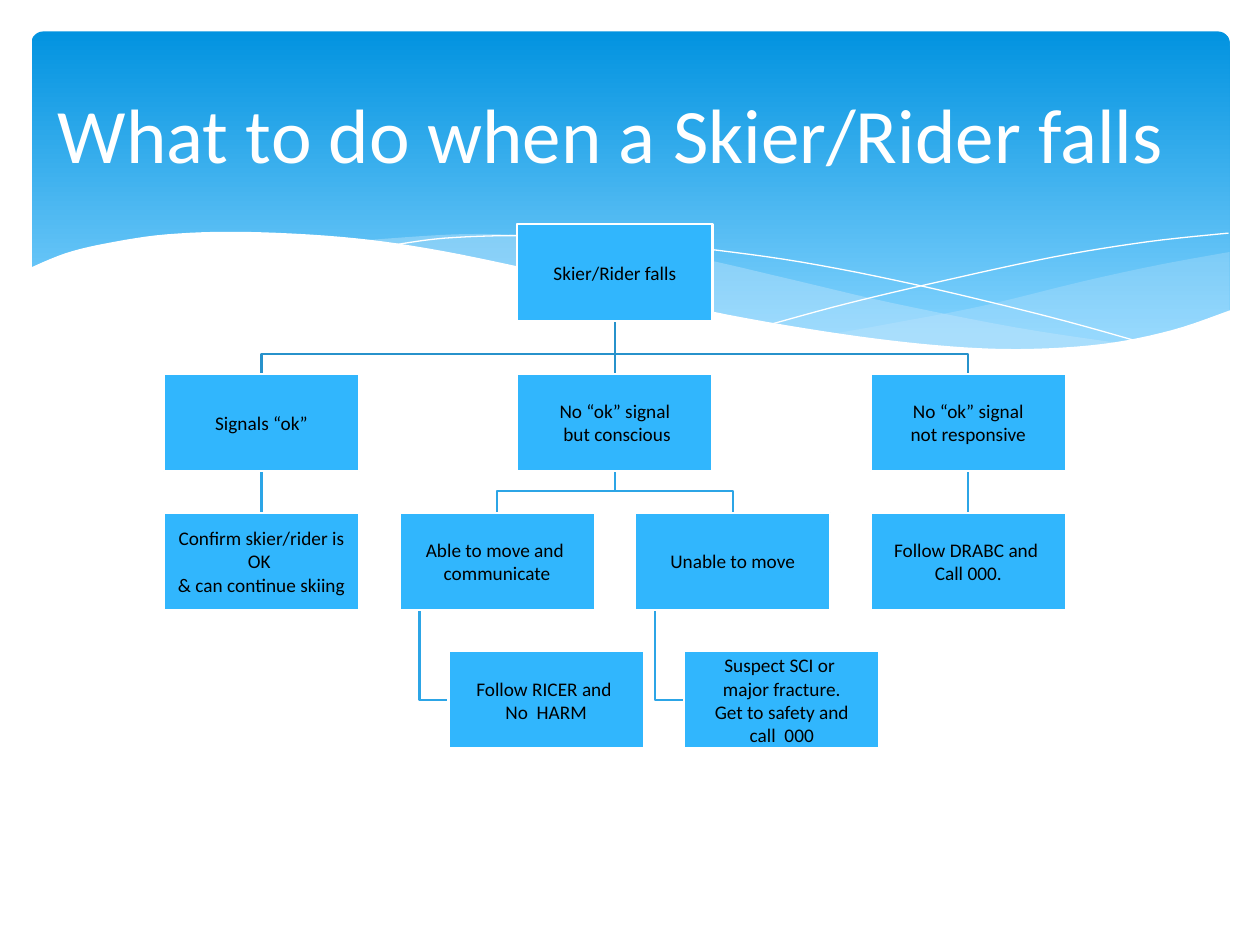
"""Build the slide with the decision tree for a fallen skier or rider."""
from lxml import etree
from pptx import Presentation, util as u
from pptx.dml.color import RGBColor
from pptx.enum import shapes, text
from pptx.oxml.ns import qn

WHITE = RGBColor(0xFF, 0xFF, 0xFF)
BLACK = RGBColor(0x00, 0x00, 0x00)
SKY_TOP = RGBColor(0x02, 0x93, 0xE0)
SKY_BOTTOM = RGBColor(0x83, 0xD3, 0xFE)
MIST = RGBColor(0xC6, 0xE7, 0xFC)
BOX_BLUE = RGBColor(0x31, 0xB6, 0xFD)
TRUNK_BLUE = RGBColor(0x27, 0x92, 0xCB)
BRANCH_BLUE = RGBColor(0x2C, 0xA5, 0xE6)

BOX_WIDTH, BOX_HEIGHT = 1.55, 0.77
FIRST_LEFT, COLUMN_PITCH = 1.3, 1.87
ROW_TOPS = [1.78, 2.97, 4.07, 5.17]
INDENT = 0.39

NODES = {
    "falls": (1.5, 0, 0, ["Skier/Rider falls"]),
    "ok": (0, 1, 0, ["Signals “ok”"]),
    "conscious": (1.5, 1, 0, ["No “ok” signal", " but conscious"]),
    "unresponsive": (3, 1, 0, ["No “ok” signal", "not responsive"]),
    "confirm": (0, 2, 0, ["Confirm skier/rider is OK ", "& can continue skiing"]),
    "able": (1, 2, 0, ["Able to move and ", "communicate"]),
    "unable": (2, 2, 0, ["Unable to move"]),
    "drabc": (3, 2, 0, ["Follow DRABC and ", "Call 000."]),
    "ricer": (1, 3, INDENT, ["Follow RICER and ", "No  HARM"]),
    "fracture": (2, 3, INDENT, ["Suspect SCI or ", "major fracture.",
                                " Get to safety and ", "call  000"]),
}
STRAIGHT_LINKS = [("falls", "conscious", TRUNK_BLUE), ("ok", "confirm", BRANCH_BLUE),
                  ("unresponsive", "drabc", BRANCH_BLUE)]
FORK_LINKS = [("falls", "ok", 0.26, TRUNK_BLUE), ("falls", "unresponsive", 0.26, TRUNK_BLUE),
              ("conscious", "able", 0.16, BRANCH_BLUE),
              ("conscious", "unable", 0.16, BRANCH_BLUE)]
HANGING_LINKS = [("able", "ricer"), ("unable", "fracture")]

RIGHT_MIST = [
    [(9.76, 2), (9.21, 2.1), (8.61, 2.23), (7.79, 2.43), (7.06, 2.57), (6.61, 2.65)],
    [(6.61, 2.65), (7.05, 2.71), (7.57, 2.76), (8.14, 2.78), (8.72, 2.74), (9.28, 2.64),
     (9.76, 2.47)],
]
WIDE_MIST = [
    [(8.93, 2.73), (8.07, 2.6), (7.06, 2.4), (6.29, 2.22), (5.55, 2.05), (4.89, 1.94),
     (4.2, 1.87), (3.61, 1.86), (2.86, 1.91)],
    [(2.86, 1.91), (3.62, 2.03), (4.49, 2.22), (5.3, 2.4), (6.01, 2.55), (6.8, 2.68),
     (7.48, 2.76), (8.18, 2.79), (8.93, 2.73)],
]
FALLING_LINE = [(3.09, 1.95), (3.53, 1.89), (4.16, 1.87), (4.89, 1.9), (5.56, 1.97),
                (6.36, 2.08), (7.27, 2.26), (8.31, 2.51), (9.07, 2.72)]
RISING_LINE = [(6.13, 2.57), (6.72, 2.41), (7.48, 2.23), (8.36, 2.04), (9.1, 1.92),
               (9.75, 1.85)]
SNOW_EDGE = [(9.77, 2.46), (9.3, 2.62), (8.75, 2.73), (8.09, 2.77), (7.44, 2.74),
             (6.68, 2.65), (5.79, 2.5), (5.03, 2.33), (4.18, 2.13), (3.39, 1.97),
             (2.71, 1.88), (1.93, 1.84), (1.32, 1.86), (0.85, 1.93), (0.52, 2.01),
             (0.23, 2.13)]


def smooth(points, steps=6):
    """Return the points of a Catmull-Rom curve through the given points."""
    padded = [points[0], *points, points[-1]]
    curve = [points[0]]
    for a, b, c, d in zip(padded, padded[1:], padded[2:], padded[3:]):
        for step in range(1, steps + 1):
            t = step / steps
            curve.append(tuple(
                0.5 * (2 * q + (r - p) * t + (2 * p - 5 * q + 4 * r - s) * t ** 2
                       + (3 * q - p - 3 * r + s) * t ** 3)
                for p, q, r, s in zip(a, b, c, d)))
    return curve


class Painter:
    """Hold the style and the current slide."""

    font = "Calibri"
    line_width = u.Pt(1.25)

    def __init__(self, slide):
        self.slide = slide

    def banner(self, left, top, width, height):
        """Add the rounded gradient banner."""
        banner = self.slide.shapes.add_shape(
            shapes.MSO_SHAPE.ROUNDED_RECTANGLE,
            *map(u.Inches, (left, top, width, height)))
        banner.shadow.inherit = False
        banner.adjustments[0] = 0.034
        banner.line.fill.background()
        banner.fill.gradient()
        banner.fill.gradient_angle = 270
        for stop, color, position in zip(banner.fill.gradient_stops,
                                         (SKY_TOP, SKY_BOTTOM), (0, 0.9)):
            stop.color.rgb = color
            stop.position = position

    def outline(self, points, closed):
        """Add a bare freeform through the points."""
        start, *rest = [(u.Inches(x), u.Inches(y)) for x, y in points]
        builder = self.slide.shapes.build_freeform(*start)
        builder.add_line_segments(rest, close=closed)
        outline = builder.convert_to_shape()
        outline.shadow.inherit = False
        return outline

    def area(self, points, color, opacity=100):
        """Add a filled freeform without a border."""
        area = self.outline(points, True)
        area.line.fill.background()
        area.fill.solid()
        area.fill.fore_color.rgb = color
        if opacity < 100:
            tone = area.element.spPr.find(qn("a:solidFill")).find(qn("a:srgbClr"))
            etree.SubElement(tone, qn("a:alpha"), val=str(opacity * 1000))

    def path_line(self, points, color, width=line_width):
        """Add an open line through the points."""
        line = self.outline(points, False)
        line.fill.background()
        line.line.color.rgb = color
        line.line.width = width
        return line

    def set_text(self, frame, lines, size, color):
        """Set centred paragraphs in a text frame."""
        frame.word_wrap = True
        frame.vertical_anchor = text.MSO_ANCHOR.MIDDLE
        frame.text = "\n".join(lines)
        for para in frame.paragraphs:
            para.alignment = text.PP_ALIGN.CENTER
            for span in para.runs:
                span.font.name = self.font
                span.font.size = u.Pt(size)
                span.font.color.rgb = color

    def title(self, left, top, width, height, words):
        """Add the slide title."""
        box = self.slide.shapes.add_textbox(*map(u.Inches, (left, top, width, height)))
        self.set_text(box.text_frame, [words], 44, WHITE)

    def node(self, column, row, indent, lines):
        """Add one box of the tree."""
        left = FIRST_LEFT + column * COLUMN_PITCH + indent
        box = self.slide.shapes.add_shape(
            shapes.MSO_SHAPE.RECTANGLE,
            *map(u.Inches, (left, ROW_TOPS[row], BOX_WIDTH, BOX_HEIGHT)))
        box.shadow.inherit = False
        box.fill.solid()
        box.fill.fore_color.rgb = BOX_BLUE
        box.line.color.rgb = WHITE
        box.line.width = self.line_width
        frame = box.text_frame
        frame.margin_left = frame.margin_right = u.Inches(0.02)
        frame.margin_top = frame.margin_bottom = u.Inches(0.01)
        self.set_text(frame, lines, 11, BLACK)
        return box

    def link(self, parent, child, color):
        """Join two boxes with a straight connector."""
        line = self.slide.shapes.add_connector(shapes.MSO_CONNECTOR.STRAIGHT, 0, 0, 0, 0)
        line.begin_connect(parent, 2)
        line.end_connect(child, 0)
        line.line.color.rgb = color
        line.line.width = self.line_width
        etree.SubElement(line.element.spPr, qn("a:effectLst"))
        return line


def main():
    """Draw the slide and save it."""
    deck = Presentation()
    deck.slide_width, deck.slide_height = u.Inches(10), u.Inches(7.5)
    painter = Painter(deck.slides.add_slide(deck.slide_layouts[6]))

    painter.banner(0.25, 0.25, 9.51, 2.7)
    for edges, opacity in ((RIGHT_MIST, 29), (WIDE_MIST, 40)):
        painter.area([point for edge in edges for point in smooth(edge)], MIST, opacity)
    for curve in (FALLING_LINE, RISING_LINE):
        painter.path_line(smooth(curve), WHITE, u.Pt(0))
    painter.area(smooth(SNOW_EDGE) + [(0.23, 3.29), (9.77, 3.29)], WHITE)

    boxes = {name: painter.node(*node) for name, node in NODES.items()}
    lines = [painter.link(boxes[parent], boxes[child], color)
             for parent, child, color in STRAIGHT_LINKS]
    for parent, child, drop, color in FORK_LINKS:
        start_x, end_x = (FIRST_LEFT + NODES[name][0] * COLUMN_PITCH + BOX_WIDTH / 2
                          for name in (parent, child))
        start_y = ROW_TOPS[NODES[parent][1]] + BOX_HEIGHT
        lines.append(painter.path_line(
            [(start_x, start_y), (start_x, start_y + drop), (end_x, start_y + drop),
             (end_x, ROW_TOPS[NODES[child][1]])], color))
    for parent, child in HANGING_LINKS:
        left = FIRST_LEFT + NODES[parent][0] * COLUMN_PITCH
        middle = ROW_TOPS[3] + BOX_HEIGHT / 2
        lines.append(painter.path_line(
            [(left + 0.16, ROW_TOPS[2] + BOX_HEIGHT), (left + 0.16, middle),
             (left + INDENT, middle)], BRANCH_BLUE))
    for line in lines:
        boxes["falls"].element.addprevious(line.element)

    painter.title(0.2, 0.37, 9.3, 1.37, "What to do when a Skier/Rider falls")
    deck.save("out.pptx")


if __name__ == "__main__":
    main()
